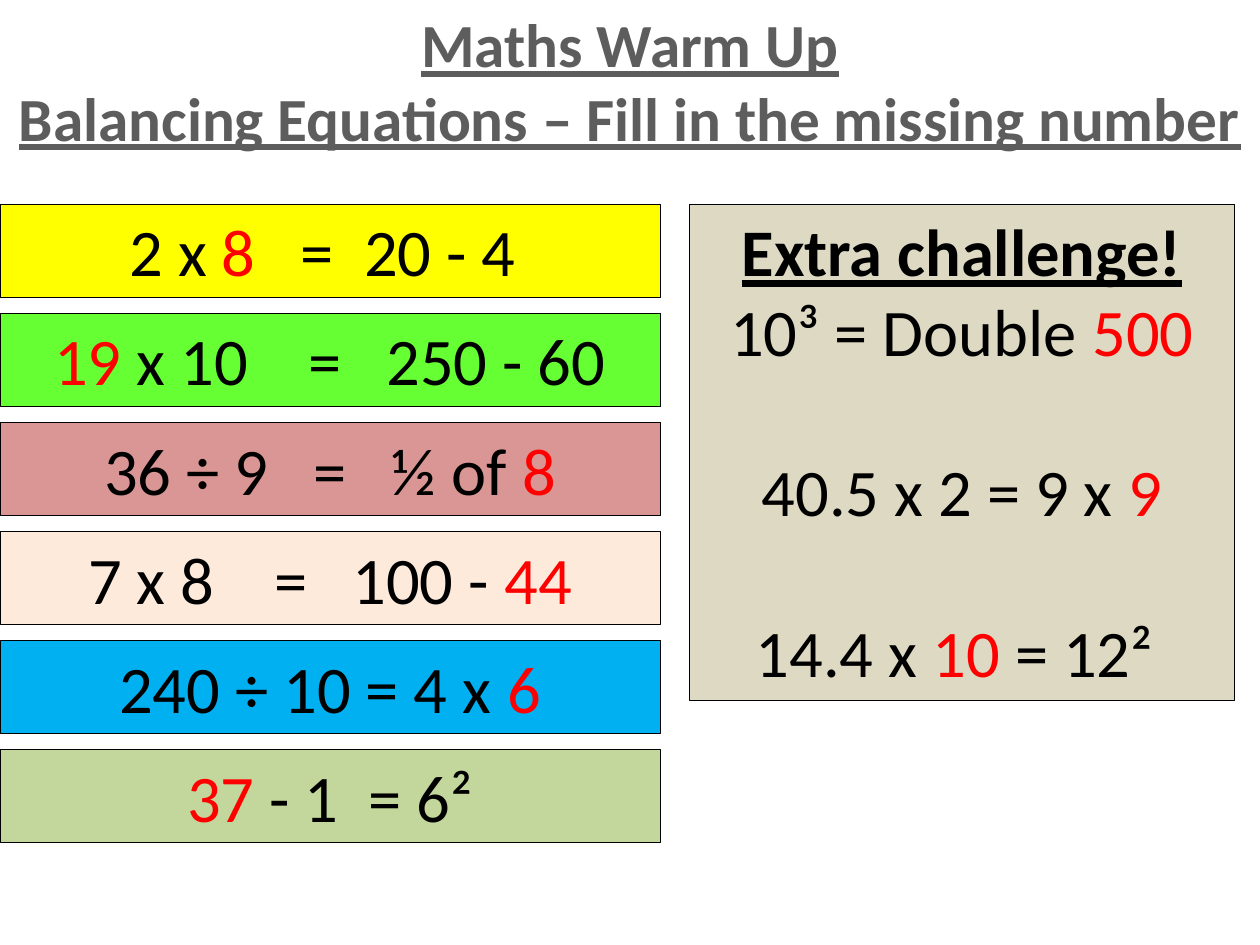
from pptx import Presentation
from pptx.dml.color import RGBColor
from pptx.enum import shapes, text
from pptx.util import Inches, Pt

FONT = "Calibri"
BLACK = RGBColor(0x00, 0x00, 0x00)
RED = RGBColor(0xFF, 0x00, 0x00)
GREY = RGBColor(0x5D, 0x5D, 0x5D)
YELLOW = RGBColor(0xFF, 0xFF, 0x00)
GREEN = RGBColor(0x66, 0xFF, 0x33)
ROSE = RGBColor(0xD9, 0x96, 0x94)
PEACH = RGBColor(0xFD, 0xEA, 0xDA)
BLUE = RGBColor(0x00, 0xB0, 0xF0)
OLIVE = RGBColor(0xC3, 0xD6, 0x9B)
TAN = RGBColor(0xDD, 0xD9, 0xC3)

TITLE = ["Maths Warm Up", "Balancing Equations – Fill in the missing number"]
EQUATIONS = [
    ("2 x |8|   =  20 - 4 ", YELLOW),
    ("|19| x 10    =   250 - 60", GREEN),
    ("36 ÷ 9   =   ½ of |8|", ROSE),
    ("7 x 8    =   100 - |44|", PEACH),
    ("240 ÷ 10 = 4 x |6|", BLUE),
    ("|37| - 1  = 6²", OLIVE),
]
CHALLENGES = ["10³ = Double |500|", "40.5 x 2 = 9 x |9|", "14.4 x |10| = 12² "]


def style_run(r, size, color, heading=False):
    """Set the font of a run; headings are bold and underlined."""
    r.font.name = FONT
    r.font.size = Pt(size)
    r.font.color.rgb = color
    r.font.bold = r.font.underline = heading


def set_frame(tf):
    """Anchor text at the top with wrapping and even margins."""
    tf.word_wrap = True
    tf.auto_size = text.MSO_AUTO_SIZE.NONE
    tf.vertical_anchor = text.MSO_ANCHOR.TOP
    tf.margin_top = tf.margin_bottom = Inches(0.05)
    tf.margin_left = tf.margin_right = Inches(0.05)


def write_equation(p, equation):
    """Write an equation, with the answer between bars in red."""
    p.alignment = text.PP_ALIGN.CENTER
    for i, part in enumerate(equation.split("|")):
        if part:
            r = p.add_run()
            r.text = part
            style_run(r, 38, RED if i % 2 else BLACK)


def add_box(s, left, top, width, height, fill):
    """Add an outlined rectangle and return its text frame."""
    sp = s.shapes.add_shape(shapes.MSO_SHAPE.RECTANGLE, Inches(left),
                            Inches(top), Inches(width), Inches(height))
    sp.shadow.inherit = False
    sp.fill.solid()
    sp.fill.fore_color.rgb = fill
    sp.line.color.rgb = BLACK
    sp.line.width = Pt(0.5)
    set_frame(sp.text_frame)
    return sp.text_frame


def place_title(s, left, top, width, height):
    """Place the two-line title."""
    sp = s.shapes.title
    sp.left, sp.top = Inches(left), Inches(top)
    sp.width, sp.height = Inches(width), Inches(height)
    tf = sp.text_frame
    tf.text = "\n".join(TITLE)
    set_frame(tf)
    for p in tf.paragraphs:
        p.alignment = text.PP_ALIGN.CENTER
        p.space_before = Pt(0)
        style_run(p.runs[0], 35, GREY, heading=True)


def add_equations(s, left, top, width, height):
    """Stack the equation bars evenly in the given box."""
    bar = 0.74
    pitch = (height - bar) / (len(EQUATIONS) - 1)
    for i, (equation, fill) in enumerate(EQUATIONS):
        tf = add_box(s, left, top + i * pitch, width, bar, fill)
        write_equation(tf.paragraphs[0], equation)


def add_challenge(s, left, top, width, height):
    """Add the extra challenge panel, its equations a line apart."""
    tf = add_box(s, left, top, width, height, TAN)
    p = tf.paragraphs[0]
    p.text = "Extra challenge!"
    p.alignment = text.PP_ALIGN.CENTER
    style_run(p.runs[0], 38, BLACK, heading=True)
    for i, equation in enumerate(CHALLENGES):
        p = tf.add_paragraph()
        p.space_before = Pt(46 if i else 0)
        write_equation(p, equation)


def main():
    """Build and save the slide."""
    prs = Presentation()
    prs.slide_width, prs.slide_height = Inches(10), Inches(7.5)
    s = prs.slides.add_slide(prs.slide_layouts[5])
    place_title(s, 0, 0, 10, 1.28)
    add_equations(s, 0, 1.62, 5.24, 5.07)
    add_challenge(s, 5.47, 1.62, 4.33, 3.94)
    prs.save("out.pptx")


if __name__ == "__main__":
    main()
